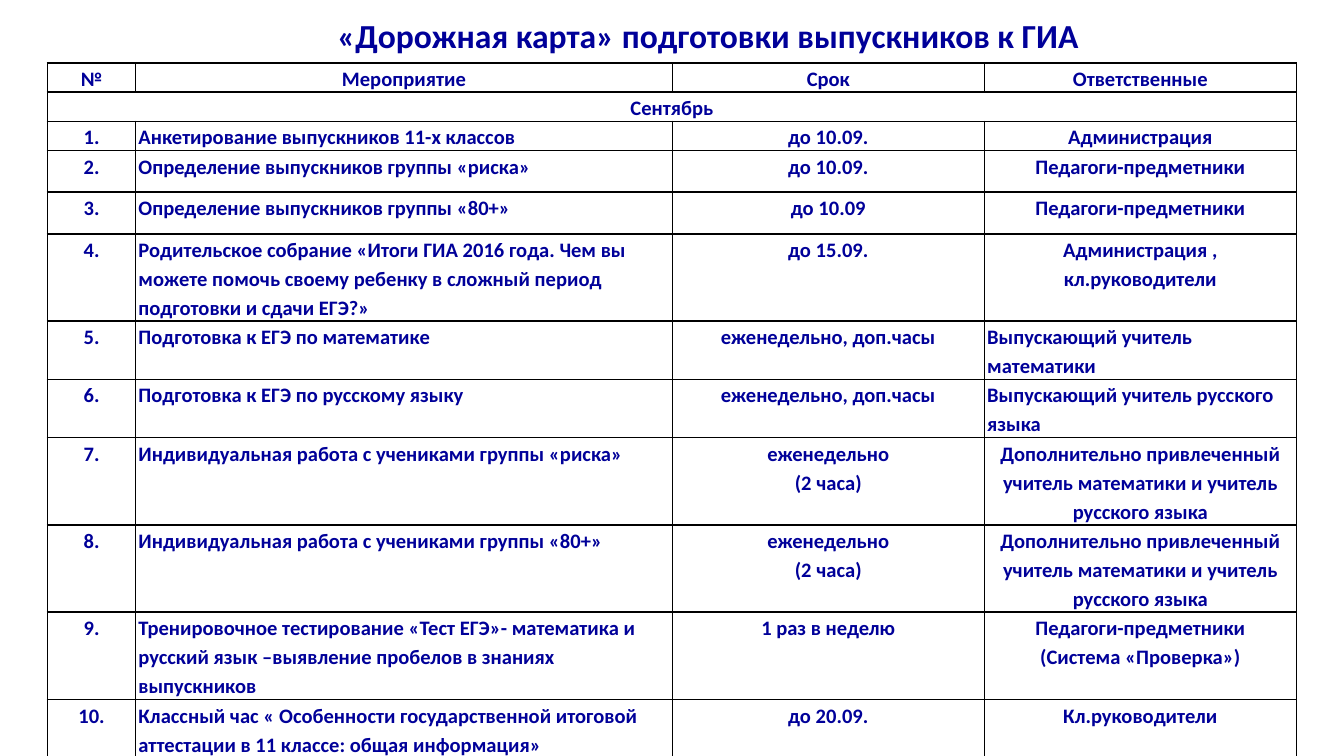
"""Build a one-slide roadmap table for preparing graduates for final exams."""
from dataclasses import dataclass

from lxml import etree
from pptx import Presentation
from pptx.dml.color import RGBColor
from pptx.enum.text import MSO_ANCHOR, PP_ALIGN
from pptx.oxml.ns import qn
from pptx.util import Pt

LEFT, CENTER = PP_ALIGN.LEFT, PP_ALIGN.CENTER
TOP, MIDDLE = MSO_ANCHOR.TOP, MSO_ANCHOR.MIDDLE


@dataclass(frozen=True)
class Theme:
    font: str = "Calibri"
    ink: str = "000099"
    paper: str = "FFFFFF"
    rule: str = "000000"
    title_size: int = 18
    cell_size: int = 11


THEME = Theme()


def write_text(frame, text, *, size, align=CENTER, spacing=1.0):
    frame.word_wrap = True
    for index, line in enumerate(text.split("\n")):
        para = frame.add_paragraph() if index else frame.paragraphs[0]
        para.alignment = align
        para.line_spacing = spacing
        para.space_before = Pt(0)
        span = para.add_run()
        span.text = line
        span.font.name = THEME.font
        span.font.size = Pt(size)
        span.font.bold = True
        span.font.color.rgb = RGBColor.from_string(THEME.ink)


def draw_borders(cell):
    properties = cell._tc.get_or_add_tcPr()
    for position, side in enumerate(("a:lnL", "a:lnR", "a:lnT", "a:lnB")):
        line = etree.Element(qn(side), w=str(Pt(1)))
        fill = etree.SubElement(line, qn("a:solidFill"))
        etree.SubElement(fill, qn("a:srgbClr"), val=THEME.rule)
        properties.insert(position, line)


deck = Presentation()
deck.slide_width, deck.slide_height = Pt(720), Pt(405)
page = deck.slides.add_slide(deck.slide_layouts[5])

title = page.shapes.title
title.left, title.top, title.width, title.height = Pt(104.4), Pt(4.5), Pt(550), Pt(29)
title.text_frame.vertical_anchor = MIDDLE
write_text(title.text_frame, "«Дорожная карта» подготовки выпускников к ГИА", size=THEME.title_size)

ONE_LINE, SPACED_LINE, TWO_LINES, THREE_LINES = 15.2, 22.3, 30.3, 46.1
EXTRA_TEACHERS = "Дополнительно привлеченный учитель математики и учитель русского языка"
WEEKLY = "еженедельно, доп.часы"
TWO_HOURS = "еженедельно\n(2 часа)"

header = ("№", "Мероприятие", "Срок", "Ответственные")
month = "Сентябрь"
activities = [
    (ONE_LINE, "Анкетирование выпускников 11-х классов", "до 10.09.", "Администрация", CENTER),
    (SPACED_LINE, "Определение выпускников группы «риска»", "до 10.09.", "Педагоги-предметники", CENTER),
    (SPACED_LINE, "Определение выпускников группы «80+»", "до 10.09", "Педагоги-предметники", CENTER),
    (THREE_LINES, "Родительское собрание «Итоги ГИА 2016 года. Чем вы можете помочь своему ребенку "
     "в сложный период подготовки и сдачи ЕГЭ?»", "до 15.09.", "Администрация , кл.руководители", CENTER),
    (TWO_LINES, "Подготовка к ЕГЭ по математике", WEEKLY, "Выпускающий учитель математики", LEFT),
    (TWO_LINES, "Подготовка к ЕГЭ по русскому языку", WEEKLY, "Выпускающий учитель русского языка", LEFT),
    (THREE_LINES, "Индивидуальная работа с учениками группы «риска»", TWO_HOURS, EXTRA_TEACHERS, CENTER),
    (THREE_LINES, "Индивидуальная работа с учениками группы «80+»", TWO_HOURS, EXTRA_TEACHERS, CENTER),
    (THREE_LINES, "Тренировочное тестирование «Тест ЕГЭ»- математика и русский язык "
     "–выявление пробелов в знаниях выпускников", "1 раз в неделю",
     "Педагоги-предметники\n(Система «Проверка»)", CENTER),
    (TWO_LINES, "Классный час « Особенности государственной итоговой аттестации в 11 классе: "
     "общая информация»", "до 20.09.", "Кл.руководители", CENTER),
]

rows = [(ONE_LINE, header, (CENTER,) * 4), (ONE_LINE, (month, "", "", ""), (CENTER,) * 4)]
for number, (height, activity, term, owner, owner_align) in enumerate(activities, 1):
    rows.append((height, (f"{number}.", activity, term, owner), (CENTER, LEFT, CENTER, owner_align)))

column_widths = (47.3, 287.5, 167.2, 167.2)
table_height = sum(height for height, _, _ in rows)
table = page.shapes.add_table(
    len(rows), len(column_widths), Pt(25.4), Pt(33.8), Pt(sum(column_widths)), Pt(table_height)
).table
table.first_row = table.horz_banding = False
for column, width in zip(table.columns, column_widths):
    column.width = Pt(width)

for row, (height, texts, aligns) in zip(table.rows, rows):
    row.height = Pt(height)
    for cell, text, align in zip(row.cells, texts, aligns):
        cell.margin_left = cell.margin_right = Pt(1.5)
        cell.margin_top = cell.margin_bottom = Pt(0)
        cell.vertical_anchor = TOP
        cell.fill.solid()
        cell.fill.fore_color.rgb = RGBColor.from_string(THEME.paper)
        draw_borders(cell)
        write_text(cell.text_frame, text, size=THEME.cell_size, align=align, spacing=1.15)

table.cell(1, 0).merge(table.cell(1, 3))

deck.save("out.pptx")
